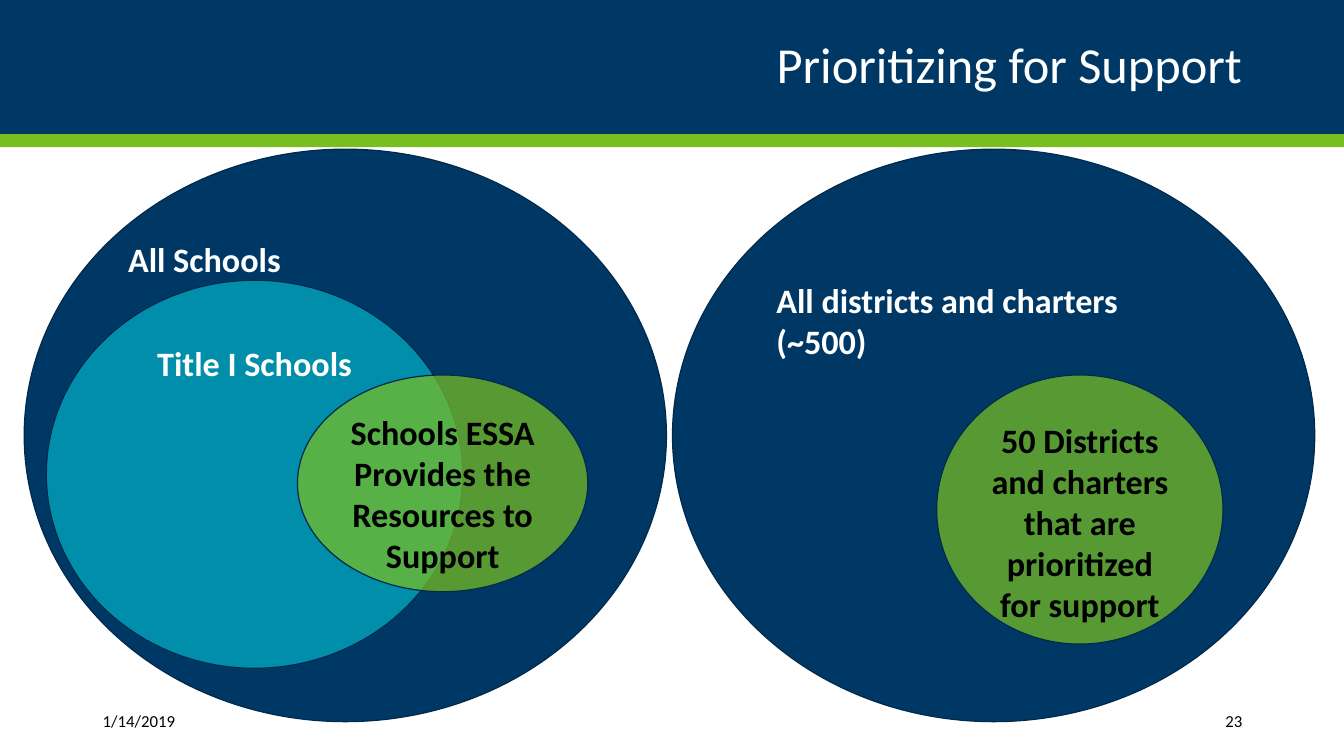
from pptx import Presentation
from pptx.dml.color import RGBColor
from pptx.enum.shapes import MSO_SHAPE
from pptx.enum.text import MSO_ANCHOR, PP_ALIGN
from pptx.oxml.ns import qn
from pptx.util import Inches, Pt
from lxml.etree import SubElement

NAVY = RGBColor(0x00, 0x38, 0x65)
DARK_NAVY = RGBColor(0x00, 0x29, 0x4B)
GREEN = RGBColor(0x78, 0xBE, 0x21)
TEAL = RGBColor(0x00, 0x8E, 0xAA)
WHITE = RGBColor(0xFF, 0xFF, 0xFF)
BLACK = RGBColor(0x00, 0x00, 0x00)

WIDTH, HEIGHT = 13.33, 7.5
LEFT, RIGHT = PP_ALIGN.LEFT, PP_ALIGN.RIGHT
CENTER = PP_ALIGN.CENTER


class VennSlide:
    font_name = "Calibri"
    label_size = 24.4
    outline_width = 0.85

    def __init__(self, slide):
        self.slide = slide

    def set_text(self, frame, text, size, color, align, bold=False):
        frame.word_wrap = True
        paragraph = frame.paragraphs[0]
        paragraph.text = text
        paragraph.alignment = align
        font = paragraph.font
        font.name, font.size, font.bold = self.font_name, Pt(size), bold
        font.color.rgb = color
        return paragraph

    def filled(self, kind, box, fill):
        shape = self.slide.shapes.add_shape(kind, *map(Inches, box))
        shape.shadow.inherit = False
        shape.fill.solid()
        shape.fill.fore_color.rgb = fill
        return shape

    def band(self, top, height, fill):
        self.filled(MSO_SHAPE.RECTANGLE, (0, top, WIDTH, height), fill).line.fill.background()

    def text(self, box, text, size, color, align):
        textbox = self.slide.shapes.add_textbox(*map(Inches, box))
        textbox.text_frame.vertical_anchor = MSO_ANCHOR.MIDDLE
        return self.set_text(textbox.text_frame, text, size, color, align)

    def circle(self, box, fill, label, color=WHITE, align=CENTER, opacity=100, top_margin=0.05):
        """Draw a set of the Venn diagram with its label at the top inside."""
        circle = self.filled(MSO_SHAPE.OVAL, box, fill)
        circle.line.color.rgb = DARK_NAVY
        circle.line.width = Pt(self.outline_width)
        if opacity < 100:
            fill_color = circle.element.spPr.find(qn("a:solidFill"))[0]
            SubElement(fill_color, qn("a:alpha")).set("val", str(opacity * 1000))
        frame = circle.text_frame
        frame.vertical_anchor = MSO_ANCHOR.TOP
        frame.margin_top = Inches(top_margin)
        self.set_text(frame, label, self.label_size, color, align, bold=True)

    def supported(self, box, label):
        """Draw the translucent subset that receives support."""
        self.circle(box, GREEN, label, BLACK, opacity=73)


def main():
    presentation = Presentation()
    presentation.slide_width, presentation.slide_height = Inches(WIDTH), Inches(HEIGHT)
    venn = VennSlide(presentation.slides.add_slide(presentation.slide_layouts[6]))

    venn.band(0, 1.33, NAVY)
    venn.band(1.33, 0.13, GREEN)
    title = venn.text((0.92, 0.17, 11.5, 1), "Prioritizing for Support", 36, WHITE, RIGHT)
    title.line_spacing = 0.9
    venn.text((0.92, 6.95, 1.49, 0.4), "1/14/2019", 12, BLACK, LEFT)
    venn.text((10.82, 6.95, 1.6, 0.4), "23", 12, BLACK, RIGHT)

    venn.circle((6.67, 1.48, 6.37, 5.68), NAVY, "All districts and charters (~500)",
                align=LEFT, top_margin=0.46)
    venn.supported((9.29, 3.72, 2.84, 2.67),
                   "50 Districts and charters that are prioritized for support")

    venn.circle((0.24, 1.48, 6.37, 5.68), NAVY, "All Schools", align=LEFT)
    venn.circle((0.46, 2.78, 4.13, 3.85), TEAL, "Title I Schools")
    venn.supported((2.95, 3.72, 2.88, 2.15), "Schools ESSA Provides the Resources to Support")

    presentation.save("out.pptx")


if __name__ == "__main__":
    main()
